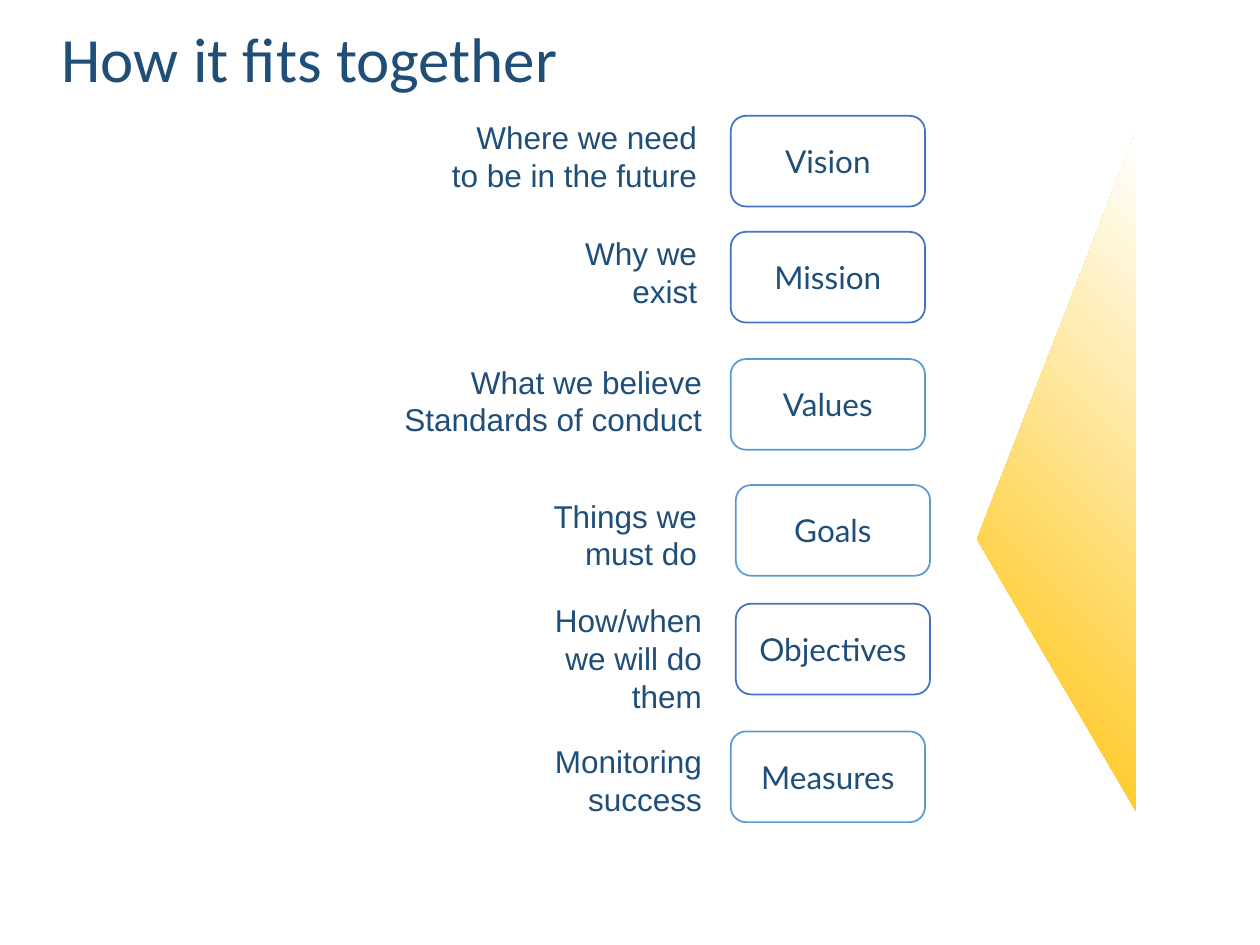
import pptx
import pptx.util
import pptx.dml.color
import pptx.enum.shapes
import pptx.enum.text
from dataclasses import dataclass

Pt = pptx.util.Pt
Shape = pptx.enum.shapes.MSO_SHAPE
Align = pptx.enum.text.PP_ALIGN
Anchor = pptx.enum.text.MSO_ANCHOR
Fit = pptx.enum.text.MSO_AUTO_SIZE


@dataclass
class Theme:
    ink: str = "1F4E79"
    blue: str = "4472C4"
    sky: str = "5B9BD5"
    gold: str = "FFC000"
    white: str = "FFFFFF"
    head: int = 36
    body: int = 18


theme = Theme()


def tint(code):
    return pptx.dml.color.RGBColor.from_string(code)


def write(para, text, face, size, align):
    para.alignment = align
    run = para.add_run()
    run.text = text
    run.font.name = face
    run.font.size = Pt(size)
    run.font.color.rgb = tint(theme.ink)


deck = pptx.Presentation()
deck.slide_width, deck.slide_height = Pt(720), Pt(540)
slide = deck.slides.add_slide(deck.slide_layouts[5])

# Triangle pointing left at the steps
wedge = slide.shapes.add_shape(
    Shape.ISOSCELES_TRIANGLE, Pt(409.7), Pt(223.9), Pt(388), Pt(90.7))
wedge.rotation = 270
wedge.adjustments[0] = 0.4
wedge.shadow.inherit = False
wedge.line.fill.background()
wedge.fill.gradient()
wedge.fill.gradient_angle = 315
for stop, code in zip(wedge.fill.gradient_stops, (theme.gold, theme.white)):
    stop.color.rgb = tint(code)

# Title
title = slide.shapes.title
title.left, title.top, title.width, title.height = Pt(28), Pt(8), Pt(620.6), Pt(50.4)
frame = title.text_frame
frame.auto_size = Fit.NONE
frame.word_wrap = True
frame.vertical_anchor = Anchor.BOTTOM
frame.paragraphs[0].line_spacing = 0.9
write(frame.paragraphs[0], "How it fits together", "Calibri", theme.head, Align.LEFT)

# Steps: name, line colour, box left and top; note lines, right, top, width, height
steps = [
    ("Vision", theme.blue, 417.6, 66.2,
     ["Where we need to be in the future"], 405.4, 64, 157.7, 51),
    ("Mission", theme.blue, 417.6, 132.5,
     ["Why we exist"], 405.4, 130.2, 103, 51),
    ("Values", theme.sky, 417.6, 205.2,
     ["What we believe", "Standards of conduct"], 408.2, 203.6, 202.3, 51),
    ("Goals", theme.sky, 420.5, 277.2,
     ["Things we must do"], 405.4, 280.2, 129.6, 51),
    ("Objectives", theme.blue, 420.5, 345,
     ["How/when we will do them"], 408.2, 340, 103, 72.7),
    ("Measures", theme.sky, 417.6, 418,
     ["Monitoring success"], 408.2, 420.5, 135.4, 51),
]
for name, edge, left, top, lines, right, start, width, height in steps:
    # Named box
    box = slide.shapes.add_shape(
        Shape.ROUNDED_RECTANGLE, Pt(left), Pt(top), Pt(111), Pt(51.8))
    box.shadow.inherit = False
    box.fill.solid()
    box.fill.fore_color.rgb = tint(theme.white)
    box.line.color.rgb = tint(edge)
    box.line.width = Pt(1)
    box.text_frame.vertical_anchor = Anchor.MIDDLE
    write(box.text_frame.paragraphs[0], name, "Lato", theme.body, Align.CENTER)

    # Note on its left
    note = slide.shapes.add_textbox(
        Pt(right - width), Pt(start), Pt(width), Pt(height))
    frame = note.text_frame
    frame.word_wrap = True
    frame.auto_size = Fit.SHAPE_TO_FIT_TEXT
    for i, line in enumerate(lines):
        para = frame.add_paragraph() if i else frame.paragraphs[0]
        write(para, line, "Arial", theme.body, Align.RIGHT)

deck.save("out.pptx")
